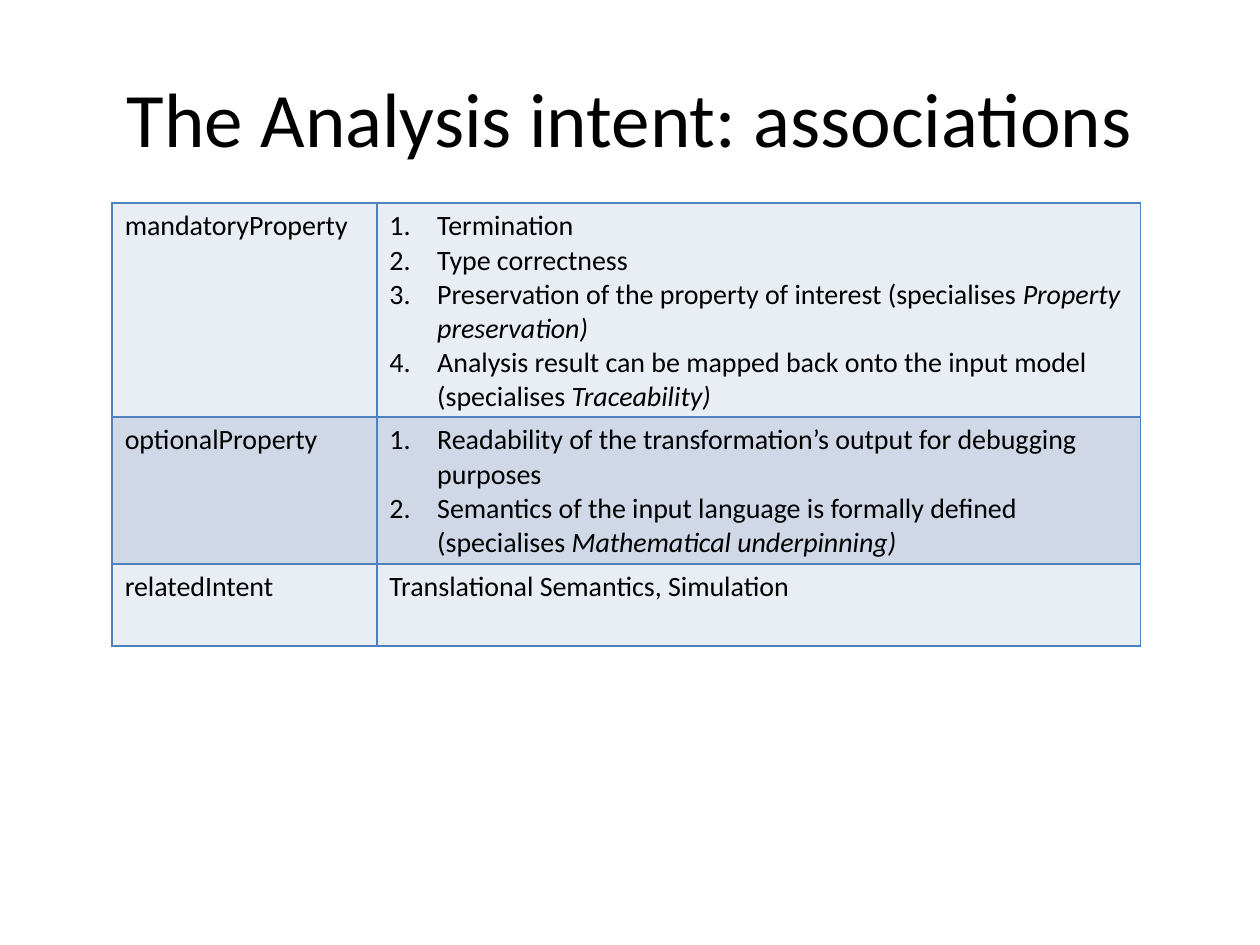
from lxml.etree import SubElement
from pptx import Presentation
from pptx.dml.color import RGBColor
from pptx.enum.text import MSO_ANCHOR, PP_ALIGN
from pptx.oxml.ns import qn
from pptx.util import Inches, Pt

FONT = "Calibri"
BLACK, BORDER = "000000", "4F81BD"
BANDS = ["E9EDF4", "D0D8E8"]
COLUMN_WIDTHS = [2.1, 6.06]
INDENT = 0.38

# Each row: label, height, whether numbered, entries of (plain text, italic text)
ASSOCIATIONS = [
    ("mandatoryProperty", 1.54, True, [
        ("Termination", ""),
        ("Type correctness", ""),
        ("Preservation of the property of interest (specialises ",
         "Property preservation)"),
        ("Analysis result can be mapped back onto the input model (specialises ",
         "Traceability)"),
    ]),
    ("optionalProperty", 1.06, True, [
        ("Readability of the transformation’s output for debugging purposes", ""),
        ("Semantics of the input language is formally defined (specialises ",
         "Mathematical underpinning)"),
    ]),
    ("relatedIntent", 0.65, False, [("Translational Semantics, Simulation", "")]),
]


def color(hex_value):
    return RGBColor.from_string(hex_value)


def add_text(paragraph, text, size, italic=False):
    run = paragraph.add_run()
    run.text = text
    run.font.name = FONT
    run.font.size = Pt(size)
    run.font.italic = italic
    run.font.color.rgb = color(BLACK)


def hang(paragraph, numbered):
    """Give a paragraph a hanging indent, with a number if wanted."""
    properties = paragraph._p.get_or_add_pPr()
    properties.set("marL", str(Inches(INDENT)))
    properties.set("indent", str(-Inches(INDENT)))
    if numbered:
        SubElement(properties, qn("a:buFont"), typeface="+mj-lt")
        SubElement(properties, qn("a:buAutoNum"), type="arabicPeriod")
    else:
        SubElement(properties, qn("a:buNone"))


def style_cell(cell, fill):
    properties = cell._tc.get_or_add_tcPr()
    for side in ("lnL", "lnR", "lnT", "lnB"):
        line = SubElement(properties, qn(f"a:{side}"), w=str(Pt(1)))
        solid = SubElement(line, qn("a:solidFill"))
        SubElement(solid, qn("a:srgbClr"), val=BORDER)
    cell.fill.solid()
    cell.fill.fore_color.rgb = color(fill)


def add_title(slide, left, top, width, height):
    frame = slide.shapes.add_textbox(left, top, width, height).text_frame
    frame.word_wrap = True
    frame.vertical_anchor = MSO_ANCHOR.MIDDLE
    heading = frame.paragraphs[0]
    heading.alignment = PP_ALIGN.CENTER
    add_text(heading, "The Analysis intent: associations", 44)


def add_associations(slide, left, top, width, height):
    table = slide.shapes.add_table(
        len(ASSOCIATIONS), len(COLUMN_WIDTHS), left, top, width, height).table
    table.first_row = False
    for column, column_width in zip(table.columns, COLUMN_WIDTHS):
        column.width = Inches(column_width)

    for index, (label, row_height, numbered, entries) in enumerate(ASSOCIATIONS):
        table.rows[index].height = Inches(row_height)
        label_cell, entry_cell = table.rows[index].cells
        for cell in (label_cell, entry_cell):
            style_cell(cell, BANDS[index % 2])
        add_text(label_cell.text_frame.paragraphs[0], label, 16)

        # Entries, the specialised property in italics
        frame = entry_cell.text_frame
        for number, (plain, specialised) in enumerate(entries):
            entry = frame.add_paragraph() if number else frame.paragraphs[0]
            hang(entry, numbered)
            add_text(entry, plain, 16)
            if specialised:
                add_text(entry, specialised, 16, italic=True)


def main():
    deck = Presentation()
    deck.slide_width, deck.slide_height = Inches(10), Inches(7.5)
    slide = deck.slides.add_slide(deck.slide_layouts[6])
    add_title(slide, Inches(0.5), Inches(0.3), Inches(9), Inches(1.25))
    add_associations(slide, Inches(0.89), Inches(1.61), Inches(8.16), Inches(3.52))
    deck.save("out.pptx")


if __name__ == "__main__":
    main()
